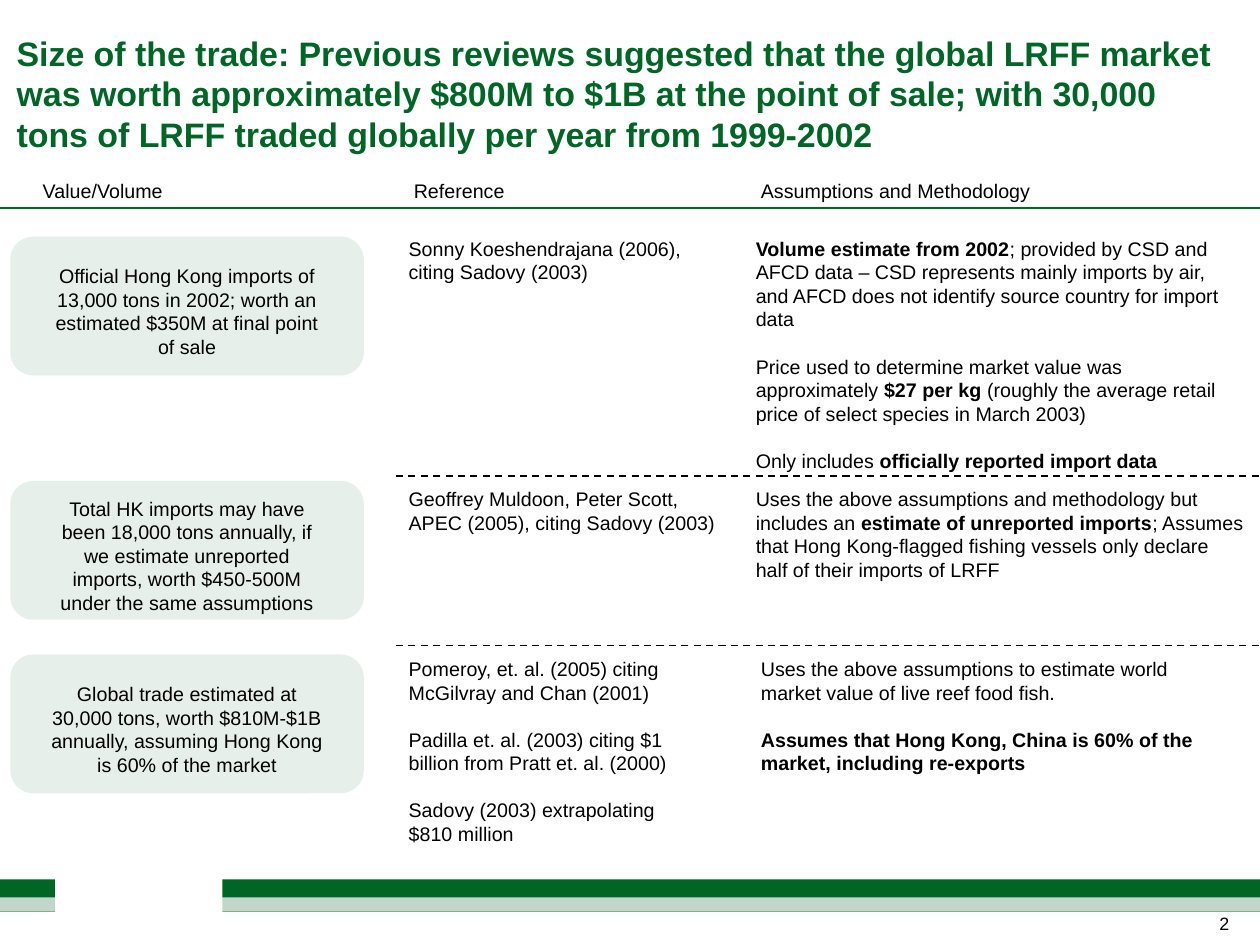
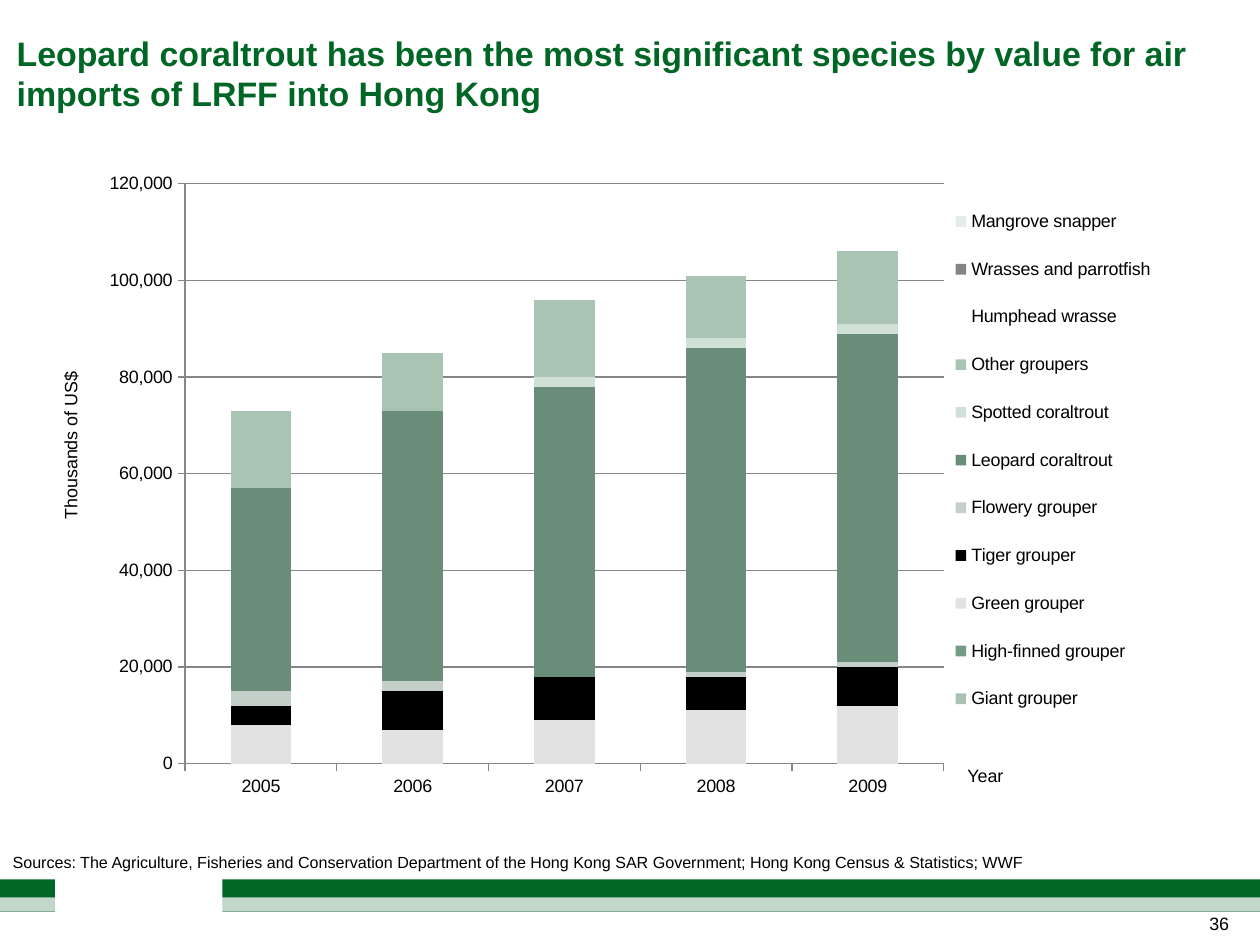
from lxml import etree
from pptx import Presentation
from pptx.chart.data import CategoryChartData
from pptx.dml.color import RGBColor
from pptx.enum.chart import XL_CHART_TYPE, XL_LEGEND_POSITION, XL_TICK_MARK
from pptx.enum.dml import MSO_LINE
from pptx.enum.shapes import MSO_CONNECTOR, MSO_SHAPE
from pptx.enum.text import MSO_ANCHOR, PP_ALIGN
from pptx.oxml import parse_xml
from pptx.oxml.ns import nsdecls, qn
from pptx.util import Inches, Pt

FONT = "Arial"
WIDE, HIGH = 9.8, 7.35
HEX = {"green": "006625", "pale": "C2D7CA", "pill": "E7EFEA",
       "white": "FFFFFF", "black": "000000", "grid": "868686"}
GAP = 13.2  # space between paragraphs of body text


def rgb(name):
    return RGBColor.from_string(HEX.get(name, name))


def fill_text(frame, paras, size, color="black", align=PP_ALIGN.LEFT, bold=False):
    """Each paragraph is a list of runs; a run in a tuple is bold."""
    for i, runs in enumerate(paras):
        para = frame.paragraphs[0] if i == 0 else frame.add_paragraph()
        para.alignment = align
        if i:
            para.space_before = Pt(GAP)
        for part in runs:
            strong = isinstance(part, tuple)
            run = para.add_run()
            run.text = part[0] if strong else part
            run.font.name = FONT
            run.font.size = Pt(size)
            run.font.bold = bold or strong
            run.font.color.rgb = rgb(color)


def set_pads(frame, left, top, right, bottom):
    frame.margin_left, frame.margin_right = Inches(left), Inches(right)
    frame.margin_top, frame.margin_bottom = Inches(top), Inches(bottom)


def add_text(slide, box, paras, size=11, pad=None, wrap=True, **look):
    shape = slide.shapes.add_textbox(*map(Inches, box))
    frame = shape.text_frame
    frame.word_wrap = wrap
    if pad is not None:
        set_pads(frame, pad, pad, pad, pad)
    fill_text(frame, paras, size, **look)
    return shape


def add_block(slide, box, color, kind=MSO_SHAPE.RECTANGLE):
    shape = slide.shapes.add_shape(kind, *map(Inches, box))
    shape.shadow.inherit = False
    shape.fill.solid()
    shape.fill.fore_color.rgb = rgb(color)
    shape.line.fill.background()
    return shape


def add_rule(slide, left, right, y, color, width, dash=None):
    rule = slide.shapes.add_connector(
        MSO_CONNECTOR.STRAIGHT, Inches(left), Inches(y), Inches(right), Inches(y))
    rule.line.color.rgb = rgb(color)
    rule.line.width = Pt(width)
    if dash:
        rule.line.dash_style = dash
    etree.SubElement(rule._element.spPr, qn("a:effectLst"))


def add_base(deck, title, lines, page):
    """Slide with footer bands, title and page number."""
    slide = deck.slides.add_slide(deck.slide_layouts[6])
    add_block(slide, (0, 6.84, WIDE, 0.25), "green")
    add_block(slide, (0, 6.98, WIDE, 0.11), "pale")
    add_block(slide, (0.43, 6.76, 1.3, 0.57), "white")
    add_text(slide, (0.13, 0.25, 9.43, 0.32 * lines), [[title]], 19, pad=0,
             color="green", bold=True)
    add_text(slide, (9.39, 7.1, 0.17, 0.17), [[page]], 10, pad=0, wrap=False,
             align=PP_ALIGN.RIGHT)
    return slide


# Reviews slide
HEADS = [(0, 1.6, "Value/Volume", PP_ALIGN.CENTER),
         (3.12, 2.7, "Reference", PP_ALIGN.LEFT),
         (5.82, 2.7, "Assumptions and Methodology", PP_ALIGN.LEFT)]

# Pill top, text top, notes left, claim, references, notes
ROWS = [
    (1.84, 1.79, 5.78,
     "Official Hong Kong imports of 13,000 tons in 2002; worth an estimated "
     "$350M at final point of sale",
     [["Sonny Koeshendrajana (2006), citing Sadovy (2003)"]],
     [[("Volume estimate from 2002",),
       "; provided by CSD and AFCD data – CSD represents mainly imports by air, "
       "and AFCD does not identify source country for import data"],
      ["Price used to determine market value was approximately ",
       ("$27 per kg ",),
       "(roughly the average retail price of select species in March 2003)"],
      ["Only includes ", ("officially reported import data",)]]),
    (3.74, 3.74, 5.78,
     "Total HK imports may have been 18,000 tons annually, if we estimate "
     "unreported imports, worth $450-500M under the same assumptions",
     [["Geoffrey Muldoon, Peter Scott, APEC (2005), citing Sadovy (2003)"]],
     [["Uses the above assumptions and methodology but includes an ",
       ("estimate of unreported imports",),
       "; Assumes that Hong Kong-flagged fishing vessels only declare half of "
       "their imports of LRFF"]]),
    (5.09, 5.06, 5.82,
     "Global trade estimated at 30,000 tons, worth $810M-$1B annually, "
     "assuming Hong Kong is 60% of the market",
     [["Pomeroy, et. al. (2005) citing McGilvray and Chan (2001)"],
      ["Padilla et. al. (2003) citing $1 billion from Pratt et. al. (2000)"],
      ["Sadovy (2003) extrapolating $810 million"]],
     [["Uses the above assumptions to estimate world market value of live reef "
       "food fish."],
      [("Assumes that Hong Kong, China is 60% of the market, including "
        "re-exports",)]]),
]


def add_heads(slide, top):
    for left, width, label, align in HEADS:
        add_text(slide, (left, top, width, 0.29), [[label]], align=align)
    add_rule(slide, 0, WIDE, top + 0.28, "green", 1.25)


def add_pill(slide, box, claim):
    pill = add_block(slide, box, "pill", MSO_SHAPE.ROUNDED_RECTANGLE)
    frame = pill.text_frame
    frame.word_wrap = True
    frame.vertical_anchor = MSO_ANCHOR.MIDDLE
    set_pads(frame, 0.25, 0.08, 0.25, 0)
    fill_text(frame, [[claim]], 11, align=PP_ALIGN.CENTER)


def add_row(slide, row):
    pill, top, left, claim, refs, notes = row
    add_pill(slide, (0.08, pill, 2.75, 1.08), claim)
    add_text(slide, (3.08, top, 2.7 if len(refs) == 1 else 2.45, 0.47), refs)
    add_text(slide, (left, top, 3.99 if left < 5.8 else 3.84, 0.84), notes)


def make_trade(deck):
    slide = add_base(
        deck, "Size of the trade: Previous reviews suggested that the global LRFF "
        "market was worth approximately $800M to $1B at the point of sale; with "
        "30,000 tons of LRFF traded globally per year from 1999-2002", 3, "2")
    add_heads(slide, 1.34)
    for row in ROWS:
        add_row(slide, row)
    for y in (3.7, 5.02):
        add_rule(slide, 3.08, WIDE, y, "black", 1, MSO_LINE.DASH)


# Species slide
YEARS = ["2005", "2006", "2007", "2008", "2009"]
NONE = [0] * len(YEARS)
FISH = [
    ("Giant grouper", "A9C2B3", NONE),
    ("High-finned grouper", "749B83", NONE),
    ("Green grouper", "E2E2E2", [8000, 7000, 9000, 11000, 12000]),
    ("Tiger grouper", "000000", [4000, 8000, 9000, 7000, 8000]),
    ("Flowery grouper", "C5CFC9", [3000, 2000, 0, 1000, 1000]),
    ("Leopard coraltrout", "698D78", [42000, 56000, 60000, 67000, 68000]),
    ("Spotted coraltrout", "D1E0D7", [0, 0, 2000, 2000, 2000]),
    ("Other groupers", "A9C4B3", [16000, 12000, 16000, 13000, 15000]),
    ("Humphead wrasse", "FFFFFF", NONE),
    ("Wrasses and parrotfish", "848484", NONE),
    ("Mangrove snapper", "E5EDE8", NONE),
]


def set_place(part, area, box, inner=False):
    """Fix a chart part at area, in inches from the corner of the chart box."""
    for old in part.findall(qn("c:layout")):
        part.remove(old)
    rules = '<c:layoutTarget val="inner"/>' if inner else ""
    rules += '<c:xMode val="edge"/><c:yMode val="edge"/>'
    for key, dist, full in zip("xywh", area, box[2:] * 2):
        rules += f'<c:{key} val="{dist / full}"/>'
    node = parse_xml(f'<c:layout {nsdecls("c")}><c:manualLayout>{rules}'
                     "</c:manualLayout></c:layout>")
    part.insert(0 if inner else 1, node)


def add_bars(slide, box):
    data = CategoryChartData(number_format="#,##0")
    data.categories = YEARS
    for name, _, vals in FISH:
        data.add_series(name, vals)
    chart = slide.shapes.add_chart(
        XL_CHART_TYPE.COLUMN_STACKED, *map(Inches, box), data).chart
    chart.has_title = False
    chart.font.name, chart.font.size = FONT, Pt(10)
    chart.font.color.rgb = rgb("black")

    # Bars
    plot = chart.plots[0]
    plot.gap_width, plot.overlap, plot.vary_by_categories = 150, 100, False
    for bar, (_, color, _) in zip(plot.series, FISH):
        bar.format.fill.solid()
        bar.format.fill.fore_color.rgb = rgb(color)

    # Axes
    scale = chart.value_axis
    scale.minimum_scale, scale.maximum_scale, scale.major_unit = 0, 120000, 20000
    scale.tick_labels.number_format = "#,##0"
    scale.tick_labels.number_format_is_linked = False
    scale.has_major_gridlines = True
    for axis in (scale, chart.category_axis):
        axis.major_tick_mark = XL_TICK_MARK.OUTSIDE
    for part in (scale, chart.category_axis, scale.major_gridlines):
        part.format.line.color.rgb = rgb("grid")
        part.format.line.width = Pt(0.75)

    # Legend
    chart.has_legend = True
    chart.legend.position = XL_LEGEND_POSITION.RIGHT
    chart.legend.include_in_layout = False
    set_place(chart._chartSpace.chart.plotArea, (0.76, 0.17, 5.9, 4.51), box, True)
    set_place(chart.legend._element, (6.66, 0.17, 1.7, 4.3), box)


def make_fish(deck):
    slide = add_base(
        deck, "Leopard coraltrout has been the most significant species by value "
        "for air imports of LRFF into Hong Kong", 2, "36")
    add_bars(slide, (0.68, 1.26, 8.52, 5.04))
    unit = add_text(slide, (-0.33, 3.33, 1.76, 0.27), [["Thousands of US$"]], 10,
                    align=PP_ALIGN.CENTER)
    unit.rotation = 270
    add_text(slide, (7.25, 5.9, 0.83, 0.27), [["Year"]], 10, align=PP_ALIGN.CENTER)
    add_text(slide, (0, 6.58, WIDE, 0.25), [[
        "Sources: The Agriculture, Fisheries and Conservation Department of the "
        "Hong Kong SAR Government; Hong Kong Census & Statistics; WWF"]], 9)


def main():
    deck = Presentation()
    deck.slide_width, deck.slide_height = Inches(WIDE), Inches(HIGH)
    make_trade(deck)
    make_fish(deck)
    deck.save("out.pptx")


if __name__ == "__main__":
    main()
